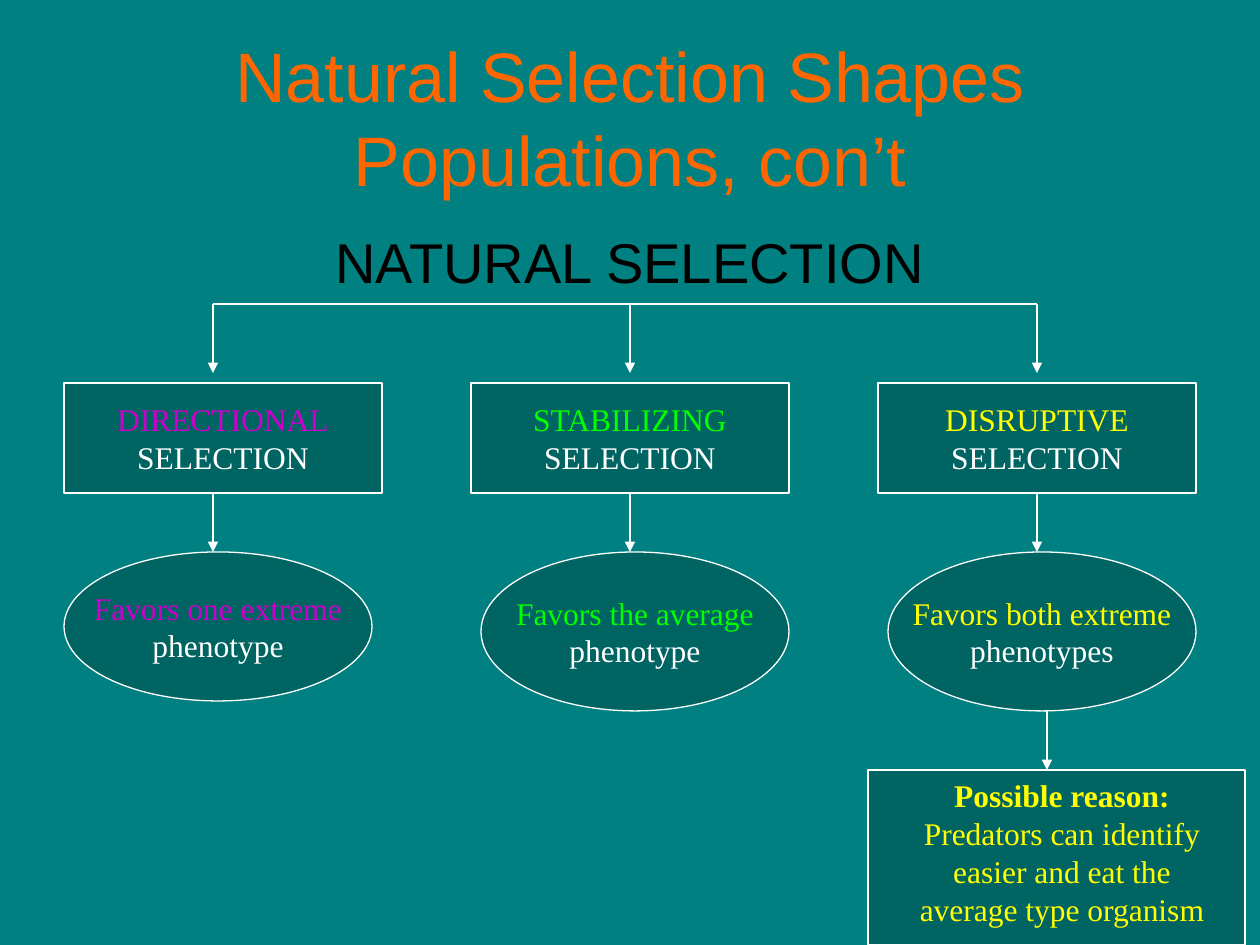
from lxml import etree
from pptx import Presentation
from pptx.dml.color import RGBColor
from pptx.enum.shapes import MSO_CONNECTOR, MSO_SHAPE
from pptx.enum.text import MSO_ANCHOR, MSO_AUTO_SIZE, PP_ALIGN
from pptx.oxml.ns import qn
from pptx.util import Pt

PX = 914400 // 126
STRAIGHT = MSO_CONNECTOR.STRAIGHT
RECTANGLE, OVAL = MSO_SHAPE.RECTANGLE, MSO_SHAPE.OVAL
CENTER, MIDDLE, TOP = PP_ALIGN.CENTER, MSO_ANCHOR.MIDDLE, MSO_ANCHOR.TOP
NO_AUTOFIT = MSO_AUTO_SIZE.NONE

TEAL = RGBColor(0x00, 0x80, 0x80)
DARK_TEAL = RGBColor(0x00, 0x64, 0x62)
ORANGE = RGBColor(0xFF, 0x66, 0x00)
PURPLE = RGBColor(0xCC, 0x00, 0xCC)
GREEN = RGBColor(0x00, 0xFF, 0x00)
YELLOW = RGBColor(0xFF, 0xFF, 0x00)
WHITE = RGBColor(0xFF, 0xFF, 0xFF)
BLACK = RGBColor(0x00, 0x00, 0x00)
SANS, SERIF = "Arial", "Times New Roman"

TITLE = "Natural Selection Shapes Populations, con’t"
HEADING = "NATURAL SELECTION"
# selection type, effect (two lines), colour, arrow x, oval left, oval height
BRANCHES = [
    ("DIRECTIONAL", ("Favors one extreme", "phenotype"), PURPLE, 213, 64, 149),
    ("STABILIZING", ("Favors the average", "phenotype"), GREEN, 630, 481, 159),
    ("DISRUPTIVE", ("Favors both extreme", "phenotypes"), YELLOW, 1037, 888, 159),
]
REASON = ("Possible reason:",
          "Predators can identify easier and eat the average type organism")

BOX_LEFT, BOX_PITCH, BOX_WIDTH, BOX_TOP, BOX_HEIGHT = 64, 407, 318, 383, 110
BAR_Y, BAR_ARROW_END = 304, 373
OVAL_TOP, OVAL_WIDTH = 552, 308
REASON_ARROW_X, REASON_TOP = 1047, 770


def emu(*lengths):
    return [length * PX for length in lengths]


def write(shape, lines, colors, font, size, anchor=MIDDLE, wrap=True):
    """Fill a shape with one centred paragraph per line."""
    frame = shape.text_frame
    frame.auto_size = NO_AUTOFIT
    frame.word_wrap = wrap
    frame.vertical_anchor = anchor
    frame.text = "\n".join(lines)
    for para, color in zip(frame.paragraphs, colors):
        para.alignment = CENTER
        for run in para.runs:
            run.font.name = font
            run.font.size = Pt(size)
            run.font.color.rgb = color


def add_line(slide, x1, y1, x2, y2, arrow=True):
    line = slide.shapes.add_connector(STRAIGHT, *emu(x1, y1, x2, y2))
    line.line.color.rgb = WHITE
    line.line.width = Pt(0.75)
    if arrow:
        outline = line.line._get_or_add_ln()
        etree.SubElement(outline, qn("a:tailEnd"), type="triangle")
    etree.SubElement(line._element.spPr, qn("a:effectLst"))


def add_panel(slide, kind, left, top, width, height):
    panel = slide.shapes.add_shape(kind, *emu(left, top, width, height))
    panel.shadow.inherit = False
    panel.fill.solid()
    panel.fill.fore_color.rgb = DARK_TEAL
    panel.line.color.rgb = WHITE
    panel.line.width = Pt(0.75)
    return panel


def add_branch(slide, index, branch):
    name, effect, color, arrow_x, oval_left, oval_height = branch
    colors = (color, WHITE)
    add_line(slide, arrow_x, BAR_Y, arrow_x, BAR_ARROW_END)
    box = add_panel(slide, RECTANGLE, BOX_LEFT + index * BOX_PITCH, BOX_TOP,
                    BOX_WIDTH, BOX_HEIGHT)
    write(box, (name, "SELECTION"), colors, SERIF, 18, wrap=False)
    add_line(slide, arrow_x, BOX_TOP + BOX_HEIGHT, arrow_x, OVAL_TOP)
    oval = add_panel(slide, OVAL, oval_left, OVAL_TOP, OVAL_WIDTH, oval_height)
    write(oval, effect, colors, SERIF, 18, wrap=False)


def add_reason(slide):
    oval_bottom = OVAL_TOP + BRANCHES[-1][-1]
    add_line(slide, REASON_ARROW_X, oval_bottom, REASON_ARROW_X, REASON_TOP)
    add_panel(slide, RECTANGLE, 868, REASON_TOP, 377, 175)
    note = slide.shapes.add_textbox(*emu(888, REASON_TOP, 348, 164))
    write(note, REASON, (YELLOW, YELLOW), SERIF, 18, anchor=TOP)
    note.text_frame.paragraphs[0].runs[0].font.bold = True


def main():
    deck = Presentation()
    deck.slide_width, deck.slide_height = emu(1260, 945)
    slide = deck.slides.add_slide(deck.slide_layouts[5])
    slide.background.fill.solid()
    slide.background.fill.fore_color.rgb = TEAL

    title = slide.shapes.title
    title.left, title.top, title.width, title.height = emu(63, 38, 1134, 158)
    write(title, [TITLE], [ORANGE], SANS, 40)

    heading = slide.shapes.add_textbox(*emu(63, 221, 1134, 80))
    write(heading, [HEADING], [BLACK], SANS, 32, anchor=TOP)

    add_line(slide, BRANCHES[0][3], BAR_Y, BRANCHES[-1][3], BAR_Y, arrow=False)
    for index, branch in enumerate(BRANCHES):
        add_branch(slide, index, branch)
    add_reason(slide)
    deck.save("out.pptx")


if __name__ == "__main__":
    main()
